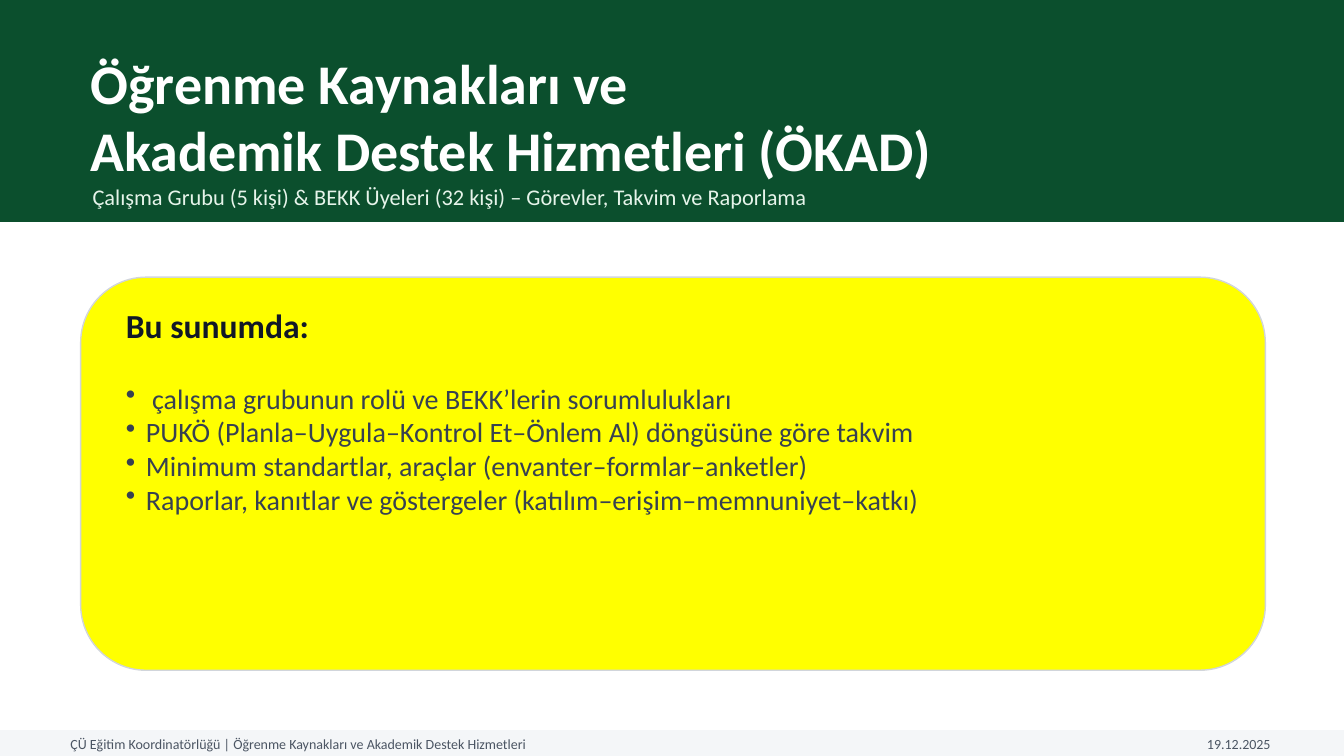
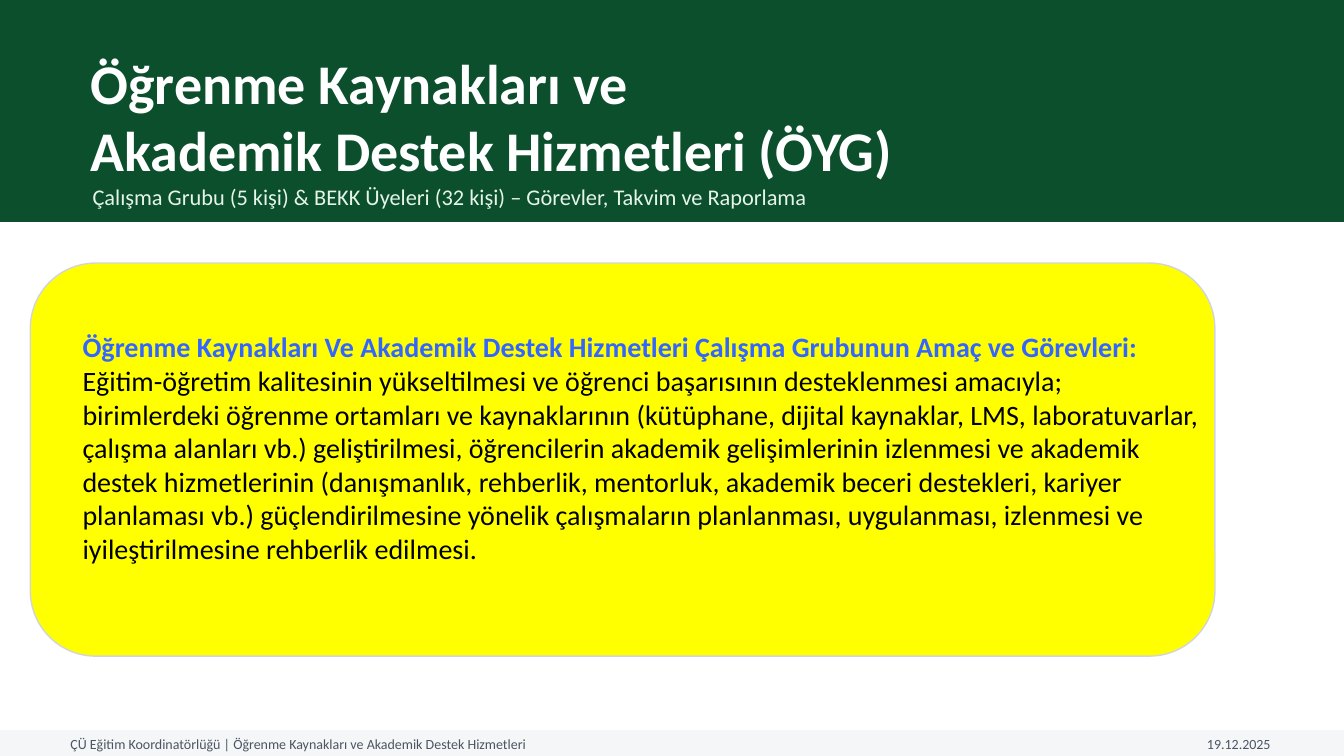
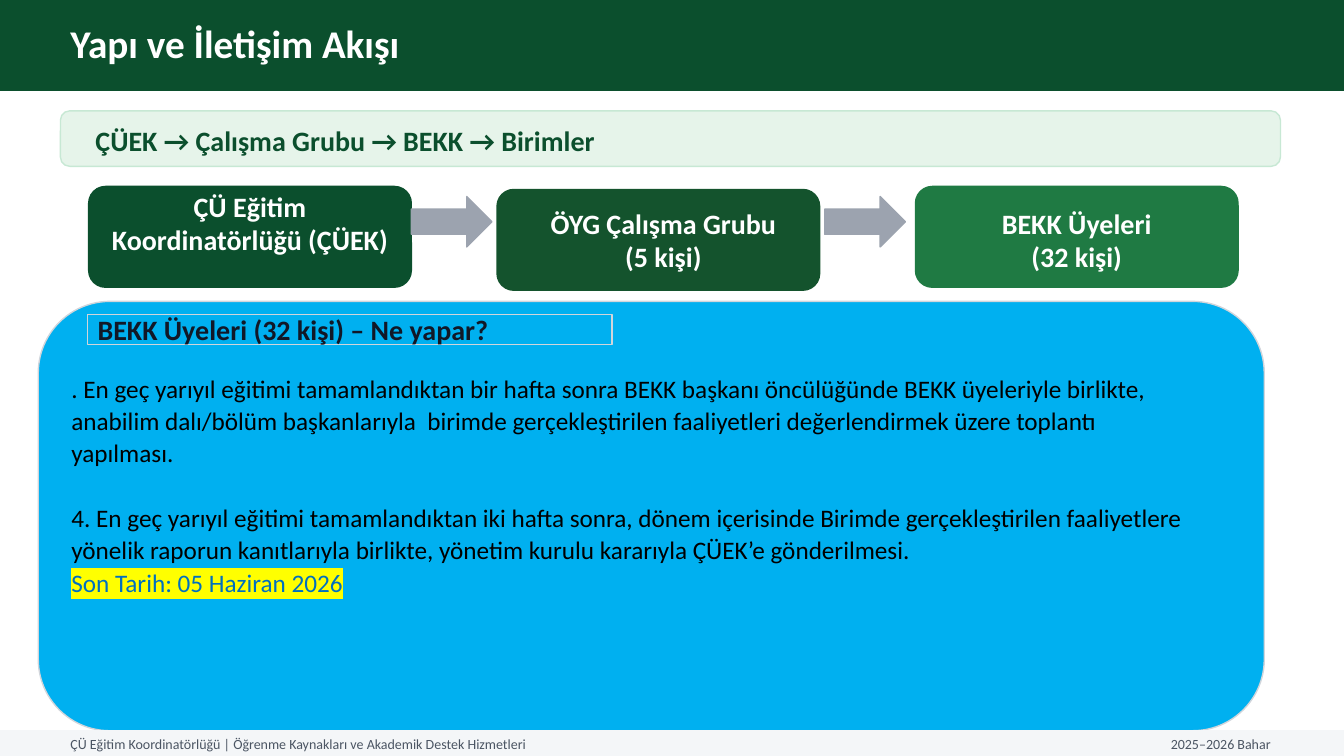
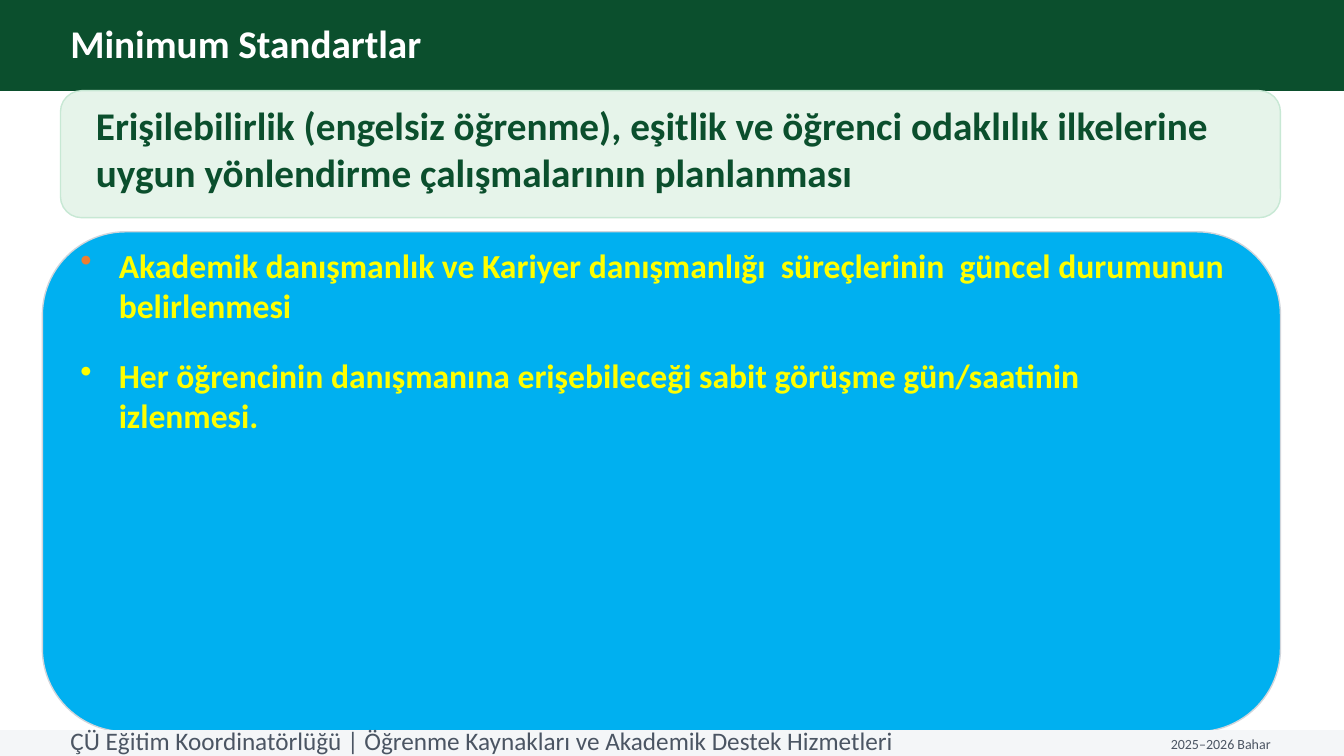
from dataclasses import dataclass, field

from lxml import etree
from pptx import Presentation
from pptx.dml.color import RGBColor
from pptx.enum.shapes import MSO_SHAPE
from pptx.enum.text import MSO_ANCHOR, PP_ALIGN
from pptx.oxml.ns import qn
from pptx.shapes.autoshape import Shape
from pptx.slide import Slide
from pptx.text.text import TextFrame
from pptx.util import Inches, Pt

RECT = MSO_SHAPE.RECTANGLE
ROUNDED = MSO_SHAPE.ROUNDED_RECTANGLE
ARROW = MSO_SHAPE.RIGHT_ARROW
TOP, MIDDLE = MSO_ANCHOR.TOP, MSO_ANCHOR.MIDDLE
LEFT, CENTER, RIGHT = PP_ALIGN.LEFT, PP_ALIGN.CENTER, PP_ALIGN.RIGHT

WIDTH, HEIGHT = 13.33, 7.5


# Colours and type sizes
@dataclass(frozen=True)
class Theme:
    font: str = "Calibri"
    green: str = "0B4F2D"
    deep_green: str = "14532D"
    mid_green: str = "1F7A43"
    mint: str = "E6F4EA"
    mint_edge: str = "C7E8D4"
    white: str = "FFFFFF"
    black: str = "000000"
    yellow: str = "FFFF00"
    sky: str = "00B0F0"
    card_edge: str = "D1D5DB"
    arrow: str = "9CA3AF"
    ink: str = "111827"
    body: str = "374151"
    footer_band: str = "F4F6F8"
    footer_text: str = "4B5563"
    lead: str = "3366FF"
    deadline: str = "0070C0"
    orange: str = "ED7D31"
    cover_size: int = 40
    title_size: int = 28
    heading_size: int = 24
    text_size: int = 20
    note_size: int = 18
    subtitle_size: int = 16
    footer_size: int = 10


THEME = Theme()


@dataclass(frozen=True)
class Box:
    left: float
    top: float
    width: float
    height: float

    def emu(self) -> tuple[int, int, int, int]:
        return (Inches(self.left), Inches(self.top),
                Inches(self.width), Inches(self.height))


@dataclass(frozen=True)
class Style:
    size: int
    color: str
    bold: bool = False
    align: PP_ALIGN = LEFT
    line_spacing: float | None = None


@dataclass(frozen=True)
class Para:
    text: str
    style: Style
    before: int = 0
    indent: float = 0  # hanging indent; a bullet is drawn when it is set
    bullet_color: str = ""
    highlight: str = ""


@dataclass(frozen=True)
class Insets:
    left: float = 0.1
    top: float = 0.05
    right: float = 0.1
    bottom: float = 0.05


@dataclass(frozen=True)
class Stage:
    lines: tuple[str, ...]
    left: float
    top: float
    fill: str
    insets: Insets = field(default_factory=Insets)


COVER = Style(THEME.cover_size, THEME.white, bold=True)
SUBTITLE = Style(THEME.subtitle_size, THEME.mint)
TITLE = Style(THEME.title_size, THEME.white, bold=True)
HEADING = Style(THEME.heading_size, THEME.ink, bold=True)
AGENDA = Style(THEME.text_size, THEME.body)
LEAD = Style(THEME.text_size, THEME.lead, bold=True)
PURPOSE = Style(THEME.text_size, THEME.black)
FLOW = Style(THEME.text_size, THEME.green, bold=True)
STAGE = Style(THEME.text_size, THEME.white, bold=True, align=CENTER)
DUTY_HEADING = Style(THEME.text_size, THEME.ink, bold=True)
DUTY = Style(THEME.note_size, THEME.black, line_spacing=1.07)
DEADLINE = Style(THEME.note_size, THEME.deadline, line_spacing=1.07)
PRINCIPLE = Style(THEME.title_size, THEME.green, bold=True)
STANDARD = Style(THEME.heading_size, THEME.yellow, bold=True)

TERM = "2025–2026 Bahar"
COVER_DATE = "19.12.2025"


# Text
def paragraphs(style: Style, *lines: str) -> list[Para]:
    return [Para(line, style) for line in lines]


def add_color(parent: etree._Element, tag: str, color: str) -> etree._Element:
    holder = etree.SubElement(parent, qn(tag))
    etree.SubElement(holder, qn("a:srgbClr")).set("val", color)
    return holder


def write(frame: TextFrame, paras: list[Para], anchor: MSO_ANCHOR = MIDDLE,
          insets: Insets = Insets()) -> None:
    frame_format = {
        "word_wrap": True,
        "vertical_anchor": anchor,
        "margin_left": Inches(insets.left),
        "margin_top": Inches(insets.top),
        "margin_right": Inches(insets.right),
        "margin_bottom": Inches(insets.bottom),
    }
    for name, value in frame_format.items():
        setattr(frame, name, value)

    for index, para in enumerate(paras):
        paragraph = frame.add_paragraph() if index else frame.paragraphs[0]
        style = para.style
        if para.indent:
            props = paragraph._p.get_or_add_pPr()
            props.set("marL", str(Inches(para.indent)))
            props.set("indent", str(-Inches(para.indent)))
            if para.bullet_color:
                add_color(props, "a:buClr", para.bullet_color)
            etree.SubElement(props, qn("a:buChar")).set("char", "•")
        paragraph.alignment = style.align
        if style.line_spacing:
            paragraph.line_spacing = style.line_spacing
        if para.before:
            paragraph.space_before = Pt(para.before)

        run = paragraph.add_run()
        run.text = para.text
        font_format = {"name": THEME.font, "size": Pt(style.size), "bold": style.bold}
        for name, value in font_format.items():
            setattr(run.font, name, value)
        run.font.color.rgb = RGBColor.from_string(style.color)
        if para.highlight:
            run_props = run._r.get_or_add_rPr()
            mark = add_color(run_props, "a:highlight", para.highlight)
            run_props.find(qn("a:latin")).addprevious(mark)


def add_text(slide: Slide, box: Box, paras: list[Para],
             anchor: MSO_ANCHOR = MIDDLE) -> None:
    write(slide.shapes.add_textbox(*box.emu()).text_frame, paras, anchor)


# Shapes
def add_panel(slide: Slide, kind: MSO_SHAPE, box: Box, fill: str,
              edge: str = "") -> Shape:
    panel = slide.shapes.add_shape(kind, *box.emu())
    panel.shadow.inherit = False
    panel.fill.solid()
    panel.fill.fore_color.rgb = RGBColor.from_string(fill)
    panel.line.color.rgb = RGBColor.from_string(edge or fill)
    panel.line.width = Pt(1)
    return panel


# Parts shared by the slides
def add_footer(slide: Slide, date: str, size: int = THEME.footer_size,
               top: float = 7.28) -> None:
    add_panel(slide, RECT, Box(0, 7.25, WIDTH, 0.25), THEME.footer_band)
    unit = "ÇÜ Eğitim Koordinatörlüğü | Öğrenme Kaynakları ve Akademik Destek Hizmetleri"
    add_text(slide, Box(0.6, top, 9.5, 0.2),
             paragraphs(Style(size, THEME.footer_text), unit))
    add_text(slide, Box(10.4, 7.28, 2.3, 0.2),
             paragraphs(Style(THEME.footer_size, THEME.footer_text, align=RIGHT), date))


def add_cover_header(slide: Slide, short_name: str) -> None:
    add_panel(slide, RECT, Box(0, 0, WIDTH, 2.2), THEME.green)
    add_text(slide, Box(0.8, 0.55, 11.7, 1.2),
             paragraphs(COVER, "Öğrenme Kaynakları ve",
                        f"Akademik Destek Hizmetleri ({short_name})"))
    add_text(slide, Box(0.82, 1.75, 11.8, 0.4),
             paragraphs(SUBTITLE, "Çalışma Grubu (5 kişi) & BEKK Üyeleri (32 kişi) "
                                  "– Görevler, Takvim ve Raporlama"))


def add_title_header(slide: Slide, title: str) -> None:
    add_panel(slide, RECT, Box(0, 0, WIDTH, 0.9), THEME.green)
    add_text(slide, Box(0.6, 0.18, 12.2, 0.5), paragraphs(TITLE, title))


def add_strip(slide: Slide, top: float, height: float, para: Para,
              insets: Insets) -> None:
    strip = add_panel(slide, ROUNDED, Box(0.6, top, 12.1, height),
                      THEME.mint, THEME.mint_edge)
    write(strip.text_frame, [para], insets=insets)


def add_card(slide: Slide, box: Box, fill: str) -> None:
    add_panel(slide, ROUNDED, box, fill, THEME.card_edge)


# Slides
def build_agenda(slide: Slide) -> None:
    add_cover_header(slide, "ÖKAD")
    add_card(slide, Box(0.8, 2.75, 11.75, 3.9), THEME.yellow)
    add_text(slide, Box(1.15, 3.05, 10.9, 0.35), paragraphs(HEADING, "Bu sunumda:"))
    topics = [
        ("çalışma grubunun rolü ve BEKK’lerin sorumlulukları", 0.26),
        ("PUKÖ (Planla–Uygula–Kontrol Et–Önlem Al) döngüsüne göre takvim", 0.2),
        ("Minimum standartlar, araçlar (envanter–formlar–anketler)", 0.2),
        ("Raporlar, kanıtlar ve göstergeler (katılım–erişim–memnuniyet–katkı)", 0.2),
    ]
    add_text(slide, Box(1.15, 3.45, 10.9, 2),
             [Para(topic, AGENDA, indent=indent) for topic, indent in topics])
    add_footer(slide, COVER_DATE)


def build_purpose(slide: Slide) -> None:
    add_cover_header(slide, "ÖYG")
    add_card(slide, Box(0.3, 2.61, 11.75, 3.9), THEME.yellow)
    add_text(slide, Box(0.72, 3.44, 11.32, 2), [
        Para("Öğrenme Kaynakları Ve Akademik Destek Hizmetleri Çalışma Grubunun "
             "Amaç ve Görevleri:", LEAD),
        Para("Eğitim-öğretim kalitesinin yükseltilmesi ve öğrenci başarısının "
             "desteklenmesi amacıyla; birimlerdeki öğrenme ortamları ve kaynaklarının "
             "(kütüphane, dijital kaynaklar, LMS, laboratuvarlar, çalışma alanları vb.) "
             "geliştirilmesi, öğrencilerin akademik gelişimlerinin izlenmesi ve akademik "
             "destek hizmetlerinin (danışmanlık, rehberlik, mentorluk, akademik beceri "
             "destekleri, kariyer planlaması vb.) güçlendirilmesine yönelik çalışmaların "
             "planlanması, uygulanması, izlenmesi ve iyileştirilmesine rehberlik "
             "edilmesi.", PURPOSE),
    ])
    add_footer(slide, COVER_DATE)


def build_structure(slide: Slide) -> None:
    add_title_header(slide, "Yapı ve İletişim Akışı")
    add_strip(slide, 1.1, 0.55, Para("ÇÜEK → Çalışma Grubu → BEKK → Birimler", FLOW),
              Insets(left=0.32, top=0.08))

    # Communication chain
    stages = [
        Stage(("ÇÜ Eğitim", "Koordinatörlüğü (ÇÜEK)"), 0.88, 1.85, THEME.green,
              Insets(top=0, bottom=0.28)),
        Stage(("ÖYG Çalışma Grubu", "(5 kişi)"), 4.93, 1.88, THEME.deep_green,
              Insets(left=0.2)),
        Stage(("BEKK Üyeleri", "(32 kişi)"), 9.08, 1.85, THEME.mid_green,
              Insets(top=0.11)),
    ]
    for stage in stages:
        node = add_panel(slide, ROUNDED, Box(stage.left, stage.top, 3.2, 1), stage.fill)
        write(node.text_frame, paragraphs(STAGE, *stage.lines), insets=stage.insets)
    for left in (4.08, 8.18):
        add_panel(slide, ARROW, Box(left, 1.95, 0.8, 0.5), THEME.arrow)

    # Duties of the members
    add_card(slide, Box(0.38, 2.99, 12.16, 4.26), THEME.sky)
    heading = add_panel(slide, RECT, Box(0.87, 3.12, 5.2, 0.3),
                        THEME.sky, THEME.card_edge)
    write(heading.text_frame,
          paragraphs(DUTY_HEADING, "BEKK Üyeleri (32 kişi) – Ne yapar?"))
    add_text(slide, Box(0.61, 3.63, 11.24, 2.98), [
        Para(". En geç yarıyıl eğitimi tamamlandıktan bir hafta sonra BEKK başkanı "
             "öncülüğünde BEKK üyeleriyle birlikte, anabilim dalı/bölüm başkanlarıyla  "
             "birimde gerçekleştirilen faaliyetleri değerlendirmek üzere toplantı "
             "yapılması.", DUTY),
        Para("4. En geç yarıyıl eğitimi tamamlandıktan iki hafta sonra, dönem içerisinde "
             "Birimde gerçekleştirilen faaliyetlere yönelik raporun kanıtlarıyla "
             "birlikte, yönetim kurulu kararıyla ÇÜEK’e gönderilmesi.", DUTY, before=23),
        Para("Son Tarih: 05 Haziran 2026", DEADLINE, highlight=THEME.yellow),
    ], TOP)
    add_footer(slide, TERM)


def build_standards(slide: Slide) -> None:
    add_title_header(slide, "Minimum Standartlar")
    add_strip(slide, 0.9, 1.26,
              Para("Erişilebilirlik (engelsiz öğrenme), eşitlik ve öğrenci odaklılık "
                   "ilkelerine uygun yönlendirme çalışmalarının planlanması", PRINCIPLE),
              Insets(left=0.29, bottom=0.16))
    add_card(slide, Box(0.42, 2.3, 12.28, 4.96), THEME.sky)
    add_text(slide, Box(0.7, 2.38, 11.56, 3.61), [
        Para("Akademik danışmanlık ve Kariyer danışmanlığı  süreçlerinin  güncel "
             "durumunun belirlenmesi", STANDARD, indent=0.38,
             bullet_color=THEME.orange),
        Para("Her öğrencinin danışmanına erişebileceği sabit görüşme gün/saatinin "
             "izlenmesi.", STANDARD, before=21, indent=0.38),
    ], TOP)
    add_footer(slide, TERM, THEME.note_size, 7.25)


def main() -> None:
    deck = Presentation()
    deck.slide_width, deck.slide_height = Inches(WIDTH), Inches(HEIGHT)
    blank = deck.slide_layouts[6]
    for build in (build_agenda, build_purpose, build_structure, build_standards):
        build(deck.slides.add_slide(blank))
    deck.save("out.pptx")


if __name__ == "__main__":
    main()
